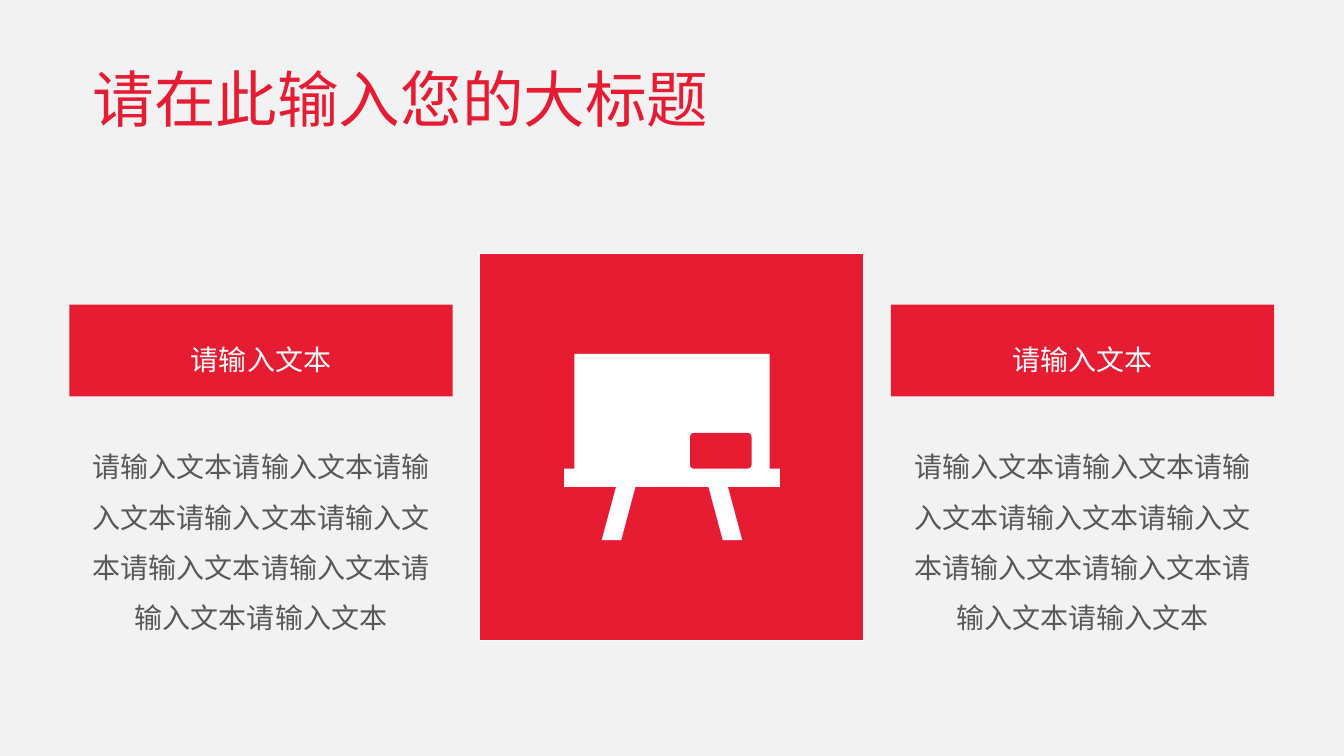
from pptx import Presentation
from pptx.dml.color import RGBColor
from pptx.enum.shapes import MSO_SHAPE
from pptx.enum.text import MSO_ANCHOR, MSO_AUTO_SIZE, PP_ALIGN
from pptx.oxml.ns import qn
from pptx.util import Cm, Pt

# Content
TITLE = "请在此输入您的大标题"
COLUMNS = [
    ("请输入文本", "请输入文本" * 9),
    ("请输入文本", "请输入文本" * 9),
]

FONT = "Noto Sans CJK SC"
RED = RGBColor(0xE6, 0x1C, 0x32)
WHITE = RGBColor(0xFF, 0xFF, 0xFF)
OFF_WHITE = RGBColor(0xF9, 0xFC, 0xFB)
GRAY = RGBColor(0x58, 0x58, 0x58)
PAPER = RGBColor(0xF2, 0xF2, 0xF2)

# Layout in centimetres
SLIDE_W, SLIDE_H = 33.87, 19.05
CENTER = SLIDE_W / 2
COL_LEFT, COL_STEP, COL_W = 1.75, 20.7, 9.66
HEAD_TOP, HEAD_H = 7.68, 2.31
BODY_TOP, BODY_H = 10.26, 6.38
TILE_TOP, TILE_W, TILE_H = 6.4, 9.68, 9.73

# Right half of the easel: distance from the centre line, distance from the top
EASEL_HALF = [
    (2.46, 8.92), (2.46, 11.81), (2.72, 11.81), (2.72, 12.27),
    (1.41, 12.27), (1.77, 13.61), (1.28, 13.61), (0.92, 12.27),
]


def write(shape, text, size=20, color=GRAY, align=PP_ALIGN.CENTER,
          anchor=MSO_ANCHOR.MIDDLE, spacing=1.5):
    tf = shape.text_frame
    tf.word_wrap = True
    tf.auto_size = MSO_AUTO_SIZE.NONE
    tf.vertical_anchor = anchor
    p = tf.paragraphs[0]
    p.alignment = align
    p.line_spacing = spacing
    r = p.add_run()
    r.text = text
    r.font.size = Pt(size)
    r.font.name = FONT
    r.font.color.rgb = color
    ea = r.font._element.makeelement(qn("a:ea"), {"typeface": FONT})
    r.font._element.find(qn("a:latin")).addnext(ea)


def paint(shape, fill, line=None):
    shape.shadow.inherit = False
    shape.fill.solid()
    shape.fill.fore_color.rgb = fill
    if line is None:
        shape.line.fill.background()
    else:
        shape.line.color.rgb = line
        shape.line.width = Pt(0.75)
    return shape


def box(s, kind, left, top, width, height):
    return s.shapes.add_shape(kind, Cm(left), Cm(top), Cm(width), Cm(height))


def draw_easel(s):
    right = [(CENTER + dx, y) for dx, y in EASEL_HALF]
    left = [(CENTER - dx, y) for dx, y in reversed(EASEL_HALF)]
    points = [(Cm(x), Cm(y)) for x, y in right + left]
    builder = s.shapes.build_freeform(*points[0])
    builder.add_line_segments(points[1:], close=True)
    paint(builder.convert_to_shape(), WHITE)
    note = paint(box(s, MSO_SHAPE.ROUNDED_RECTANGLE, 17.39, 10.91, 1.55, 0.9), RED)
    note.adjustments[0] = 0.11


def main():
    prs = Presentation()
    prs.slide_width, prs.slide_height = Cm(SLIDE_W), Cm(SLIDE_H)
    s = prs.slides.add_slide(prs.slide_layouts[5])
    s.background.fill.solid()
    s.background.fill.fore_color.rgb = PAPER

    # Title
    title = s.shapes.title
    title.left, title.top = Cm(2.08), Cm(0.46)
    title.width, title.height = Cm(30), Cm(3.1)
    write(title, TITLE, size=44, color=RED, align=PP_ALIGN.LEFT,
          anchor=MSO_ANCHOR.BOTTOM, spacing=0.9)

    # Central tile with easel
    paint(box(s, MSO_SHAPE.RECTANGLE, CENTER - TILE_W / 2, TILE_TOP,
              TILE_W, TILE_H), RED, line=WHITE)
    draw_easel(s)

    # Text columns on both sides
    for i, (heading, body) in enumerate(COLUMNS):
        left = COL_LEFT + i * COL_STEP
        tb = s.shapes.add_textbox(Cm(left), Cm(BODY_TOP), Cm(COL_W), Cm(BODY_H))
        write(tb, body)
        sp = paint(box(s, MSO_SHAPE.RECTANGLE, left, HEAD_TOP, COL_W, HEAD_H), RED)
        write(sp, heading, color=OFF_WHITE)

    prs.save("out.pptx")


if __name__ == "__main__":
    main()
